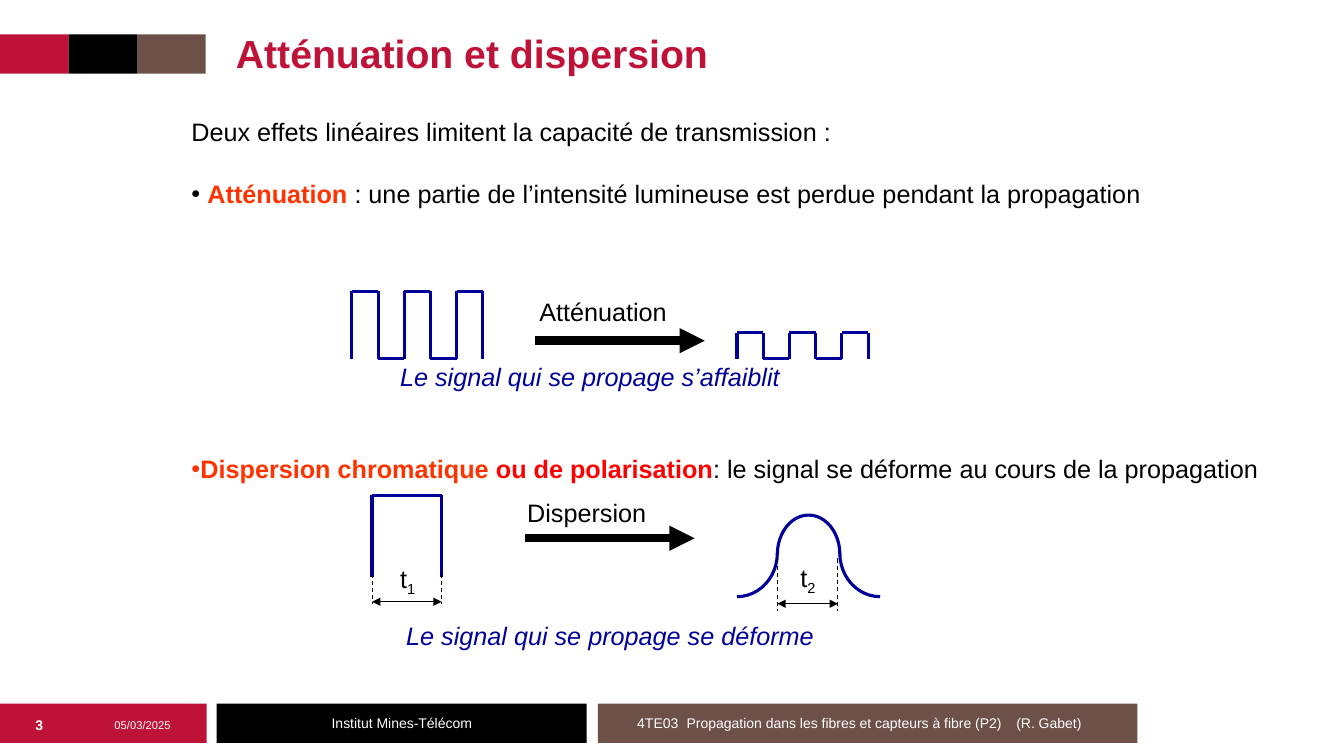
from lxml import etree
from pptx import Presentation
from pptx import util as u
from pptx.dml.color import RGBColor
from pptx.enum import dml, shapes, text
from pptx.oxml import ns

RED, BROWN, BLACK, WHITE = "BF1238", "6D5047", "000000", "FFFFFF"
BLUE, ORANGE = "000099", "FF3300"
LEFT, MID = text.PP_ALIGN.LEFT, text.PP_ALIGN.CENTER


def color(code):
    return RGBColor.from_string(code)


def place(shape, left, top, width, height):
    shape.left, shape.top = u.Inches(left), u.Inches(top)
    shape.width, shape.height = u.Inches(width), u.Inches(height)


def add_run(para, words, size, code, bold=False, italic=False, base=None):
    run = para.add_run()
    run.text = words
    font = run.font
    font.name, font.size = "Arial", u.Pt(size)
    font.bold, font.italic = bold, italic
    font.color.rgb = color(code)
    if base:
        run._r.get_or_add_rPr().set("baseline", str(base * 1000))


def add_tag(parent, name, **attrs):
    return etree.SubElement(parent, ns.qn(name), attrs)


def add_bar(slide, left, top, width, code):
    bar = slide.shapes.add_shape(
        shapes.MSO_SHAPE.RECTANGLE, u.Inches(left), u.Inches(top),
        u.Inches(width), u.Inches(0.39))
    bar.shadow.inherit = False
    bar.fill.solid()
    bar.fill.fore_color.rgb = color(code)
    bar.line.fill.background()
    return bar


def add_box(slide, left, top, width, height, wrap=True):
    box = slide.shapes.add_textbox(0, 0, 0, 0)
    place(box, left, top, width, height)
    box.text_frame.word_wrap = wrap
    return box.text_frame


def add_label(slide, left, top, width, words, code=BLACK, italic=False, sub=None):
    para = add_box(slide, left, top, width, 0.4, False).paragraphs[0]
    add_run(para, words, 18, code, italic=italic)
    if sub:
        add_run(para, sub, 18, code, base=-25)


def add_foot(frame, words, size=10, bold=False, align=MID):
    frame.vertical_anchor = text.MSO_ANCHOR.MIDDLE
    para = frame.paragraphs[0]
    para.alignment = align
    add_run(para, words, size, WHITE, bold)
    return para


def add_line(slide, x1, y1, x2, y2, code=BLUE, width=2.25, dash=False, ends=()):
    line = slide.shapes.add_connector(
        shapes.MSO_CONNECTOR.STRAIGHT, u.Inches(x1), u.Inches(y1),
        u.Inches(x2), u.Inches(y2))
    line.line.color.rgb = color(code)
    line.line.width = u.Pt(width)
    if dash:
        line.line.dash_style = dml.MSO_LINE.DASH
    for end in ends:
        add_tag(line.line._get_or_add_ln(), end, type="triangle")
    add_tag(line._element.spPr, "a:effectLst")


def add_arrow(slide, left, top):
    add_line(slide, left, top, left + 1.68, top, BLACK, 6, ends=["a:tailEnd"])


def add_span(slide, left, right, y, top, low):
    for x in (left, right):
        add_line(slide, x, top, x, low, BLACK, 0.75, True)
    add_line(slide, left, y, right, y, BLACK, 0.75,
             ends=["a:headEnd", "a:tailEnd"])


def add_train(slide, left, top, low=3.56, step=0.26):
    for i in range(6):
        x = left + i * step
        add_line(slide, x, low, x, top)
        if i < 5:
            y = low if i % 2 else top
            add_line(slide, x, y, x + step, y)


def add_arc(slide, x, y, rx, ry, start, stop):
    arc = slide.shapes.add_shape(
        shapes.MSO_SHAPE.ARC, u.Inches(x - rx), u.Inches(y - ry),
        u.Inches(2 * rx), u.Inches(2 * ry))
    arc.shadow.inherit = False
    arc.adjustments[0], arc.adjustments[1] = start * 0.6, stop * 0.6
    arc.fill.background()
    arc.line.color.rgb = color(BLUE)
    arc.line.width = u.Pt(2.25)


def add_point(frame, gap, indent, code, runs):
    para = frame.add_paragraph()
    para.space_before = u.Pt(gap)
    props = para._p.get_or_add_pPr()
    props.set("marL", str(u.Inches(indent)))
    props.set("indent", str(-u.Inches(indent)))
    add_tag(add_tag(props, "a:buClr"), "a:srgbClr", val=code)
    add_tag(props, "a:buFont", typeface="Arial")
    add_tag(props, "a:buChar", char="•")
    for words, tint, bold in runs:
        add_run(para, words, 18, tint, bold)


def add_title(slide):
    title = slide.shapes.title
    place(title, 2.24, 0.22, 8.5, 0.61)
    title.text_frame.vertical_anchor = text.MSO_ANCHOR.MIDDLE
    para = title.text_frame.paragraphs[0]
    para.alignment = LEFT
    add_run(para, "Atténuation et dispersion", 28, RED, True)


def add_body(slide):
    frame = add_box(slide, 1.8, 1.1, 10.86, 3.74)
    add_run(frame.paragraphs[0],
            "Deux effets linéaires limitent la capacité de transmission :",
            18, BLACK)
    add_point(frame, 23, 0.16, BLACK, [
        ("Atténuation ", ORANGE, True),
        (": une partie de l’intensité lumineuse est perdue pendant la propagation",
         BLACK, False)])
    add_point(frame, 175, 0.09, ORANGE, [
        ("Dispersion chromatique ", ORANGE, True),
        ("ou de polarisation", "FF0000", True),
        (": le signal se déforme au cours de la propagation", BLACK, False)])


def add_footer(slide):
    add_bar(slide, 0, 6.98, 2.05, RED)
    school = add_bar(slide, 2.15, 6.98, 3.67, BLACK)
    add_foot(school.text_frame, "Institut Mines-Télécom")
    add_foot(add_box(slide, 0, 7, 0.78, 0.39), "3", bold=True)
    add_foot(add_box(slide, 0.78, 7, 1.27, 0.39), "05/03/2025", 8)
    course = add_bar(slide, 5.93, 6.98, 5.35, BROWN).text_frame
    course.margin_left = u.Inches(0.39)
    para = add_foot(
        course,
        "4TE03\tPropagation dans les fibres et capteurs à fibre (P2)\t(R. Gabet)",
        align=LEFT)
    tabs = add_tag(para._p.get_or_add_pPr(), "a:tabLst")
    for stop in (0.49, 3.76):
        add_tag(tabs, "a:tab", pos=str(u.Inches(stop)), algn="l")


def add_loss(slide):
    add_train(slide, 3.49, 2.89)
    add_train(slide, 7.31, 3.3)
    add_arrow(slide, 5.31, 3.38)
    add_label(slide, 5.25, 2.89, 1.48, "Atténuation")
    add_label(slide, 3.87, 3.54, 4, "Le signal qui se propage s’affaiblit",
              BLUE, True)


def add_spread(slide):
    for x in (3.69, 4.38):
        add_line(slide, x, 5.72, x, 4.91)
    add_line(slide, 3.69, 4.92, 4.38, 4.92)
    add_span(slide, 3.69, 4.38, 5.97, 5.69, 5.99)
    add_label(slide, 3.87, 5.54, 0.36, "t", sub="1")
    add_arrow(slide, 5.21, 5.34)
    add_label(slide, 5.13, 4.88, 1.39, "Dispersion")
    add_arc(slide, 7.31, 5.49, 0.4, 0.43, 0, 90)
    add_arc(slide, 8.73, 5.49, 0.4, 0.43, 90, 180)
    add_arc(slide, 8.02, 5.5, 0.31, 0.39, 180, 0)
    add_span(slide, 7.71, 8.31, 5.99, 5.54, 6.06)
    add_label(slide, 7.84, 5.53, 0.36, "t", sub="2")
    add_label(slide, 3.93, 6.11, 4.28, "Le signal qui se propage se déforme",
              BLUE, True)


def main():
    deck = Presentation()
    deck.slide_width, deck.slide_height = u.Inches(13.33), u.Inches(7.5)
    slide = deck.slides.add_slide(deck.slide_layouts[5])
    for i, code in enumerate((RED, BLACK, BROWN)):
        add_bar(slide, i * 0.68, 0.34, 0.68, code)
    add_title(slide)
    add_body(slide)
    add_loss(slide)
    add_spread(slide)
    add_footer(slide)
    deck.save("out.pptx")


if __name__ == "__main__":
    main()
